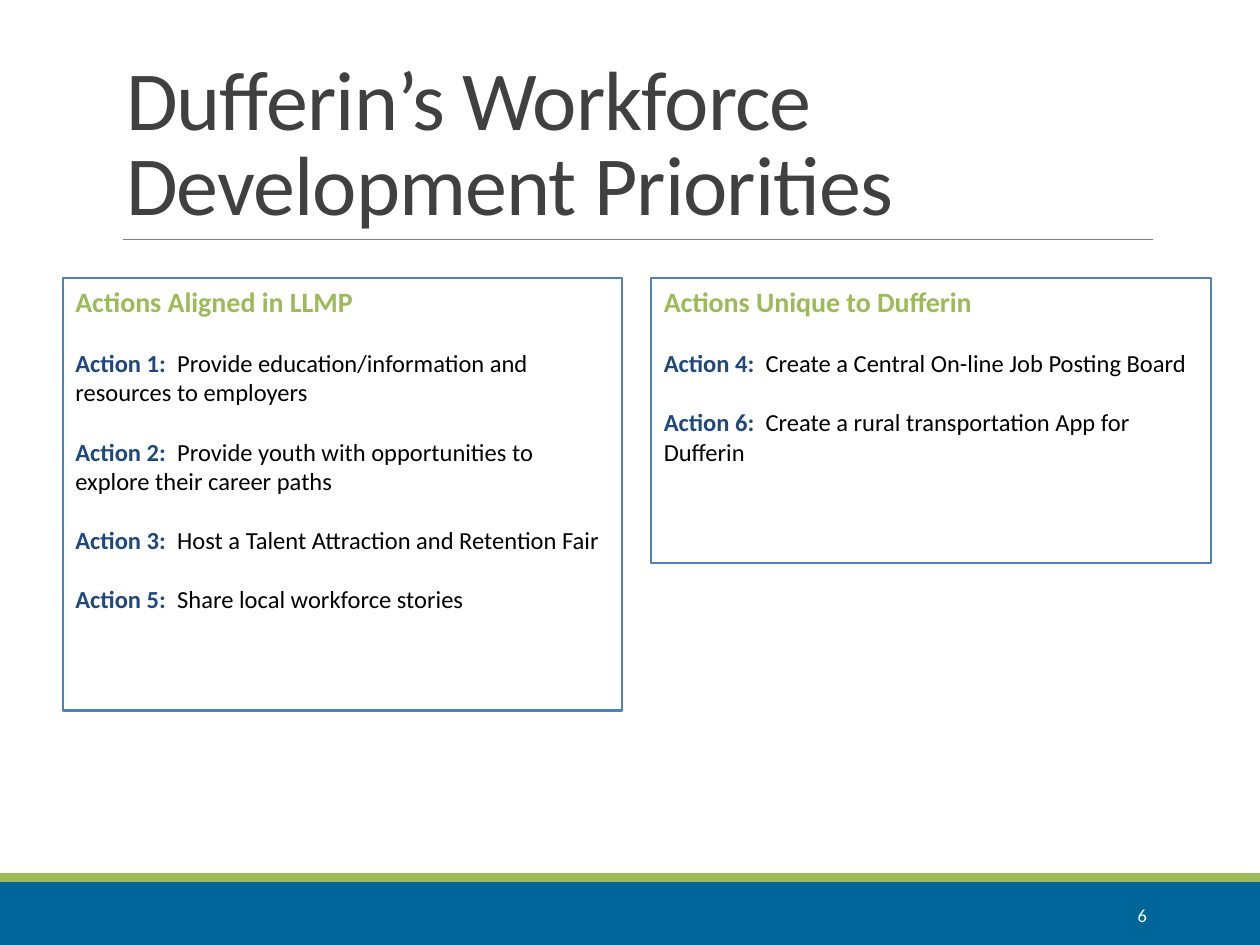
from pptx import Presentation
from pptx.dml.color import RGBColor
from pptx.enum.shapes import MSO_CONNECTOR, MSO_SHAPE
from pptx.enum.text import MSO_ANCHOR as Anchor, MSO_AUTO_SIZE as AutoSize, PP_ALIGN as Align
from pptx.oxml.ns import qn
from pptx.util import Inches, Pt
from lxml.etree import SubElement

WHITE = RGBColor(0xFF, 0xFF, 0xFF)
BLACK = RGBColor(0x00, 0x00, 0x00)
CHARCOAL = RGBColor(0x40, 0x40, 0x40)
GRAY = RGBColor(0x80, 0x80, 0x80)
GREEN = RGBColor(0x9B, 0xBB, 0x59)
NAVY = RGBColor(0x1F, 0x49, 0x7D)
BORDER_BLUE = RGBColor(0x4F, 0x81, 0xBD)
FOOTER_BLUE = RGBColor(0x00, 0x66, 0x99)

PANEL_TOP = 2.21
PANEL_WIDTH = 4.44
ALIGNED_ACTIONS = [
    ("Action 1:  ", "Provide education/information and resources to employers"),
    ("Action 2:  ", "Provide youth with opportunities to explore their career paths"),
    ("Action 3:  ", "Host a Talent Attraction and Retention Fair"),
    ("Action 5:  ", "Share local workforce stories"),
]
UNIQUE_ACTIONS = [
    ("Action 4:  ", "Create a Central On-line Job Posting Board"),
    ("Action 6:  ", "Create a rural transportation App for Dufferin"),
]


class SlideBuilder:
    font = "Calibri"
    heading_size = 16
    body_size = 14
    action_gap = 17

    def __init__(self, slide):
        self.slide = slide

    def run(self, paragraph, text, size, color, bold=False):
        run = paragraph.add_run()
        run.text = text
        run.font.name = self.font
        run.font.size = Pt(size)
        run.font.bold = bold
        run.font.color.rgb = color
        return run

    def title(self, text, left, top, width, height):
        title = self.slide.shapes.title
        title.left, title.top = Inches(left), Inches(top)
        title.width, title.height = Inches(width), Inches(height)
        frame = title.text_frame
        frame.word_wrap = True
        frame.auto_size = AutoSize.NONE
        frame.vertical_anchor = Anchor.BOTTOM
        paragraph = frame.paragraphs[0]
        paragraph.alignment = Align.LEFT
        paragraph.line_spacing = 0.85
        heading = self.run(paragraph, text, 48, CHARCOAL)
        heading._r.get_or_add_rPr().set("spc", "-50")

    def rectangle(self, left, top, width, height, fill, border=None):
        shape = self.slide.shapes.add_shape(
            MSO_SHAPE.RECTANGLE, Inches(left), Inches(top), Inches(width), Inches(height))
        shape.shadow.inherit = False
        shape.fill.solid()
        shape.fill.fore_color.rgb = fill
        if border is None:
            shape.line.fill.background()
        else:
            shape.line.color.rgb = border
            shape.line.width = Pt(1.25)
        return shape

    def rule(self, left, right, y):
        line = self.slide.shapes.add_connector(
            MSO_CONNECTOR.STRAIGHT, Inches(left), Inches(y), Inches(right), Inches(y))
        line.line.color.rgb = GRAY
        line.line.width = Pt(0.5)
        SubElement(line._element.spPr, qn("a:effectLst"))

    def page_number(self, number, left, top, width, height):
        box = self.slide.shapes.add_textbox(
            Inches(left), Inches(top), Inches(width), Inches(height))
        frame = box.text_frame
        frame.word_wrap = True
        frame.vertical_anchor = Anchor.MIDDLE
        paragraph = frame.paragraphs[0]
        paragraph.alignment = Align.RIGHT
        self.run(paragraph, number, 10.5, WHITE)

    def action_panel(self, heading, actions, left, height):
        panel = self.rectangle(left, PANEL_TOP, PANEL_WIDTH, height, WHITE, BORDER_BLUE)
        frame = panel.text_frame
        frame.word_wrap = True
        frame.vertical_anchor = Anchor.TOP
        paragraph = frame.paragraphs[0]
        paragraph.alignment = Align.LEFT
        self.run(paragraph, heading, self.heading_size, GREEN, bold=True)
        for label, description in actions:
            paragraph = frame.add_paragraph()
            paragraph.alignment = Align.LEFT
            paragraph.space_before = Pt(self.action_gap)
            self.run(paragraph, label, self.body_size, NAVY, bold=True)
            self.run(paragraph, description, self.body_size, BLACK)


def main():
    deck = Presentation()
    deck.slide_width, deck.slide_height = Inches(10), Inches(7.5)
    builder = SlideBuilder(deck.slides.add_slide(deck.slide_layouts[5]))

    builder.rectangle(0, 7, 10, 0.5, FOOTER_BLUE)
    builder.rectangle(0, 6.93, 10, 0.07, GREEN)
    builder.rule(0.98, 9.15, 1.9)
    builder.title("Dufferin’s Workforce Development Priorities", 0.9, 0.31, 8.25, 1.59)
    builder.page_number("6", 8.12, 7.06, 1.08, 0.4)
    builder.action_panel("Actions Unique to Dufferin", UNIQUE_ACTIONS, 5.17, 2.26)
    builder.action_panel("Actions Aligned in LLMP", ALIGNED_ACTIONS, 0.5, 3.43)

    deck.save("out.pptx")


if __name__ == "__main__":
    main()
